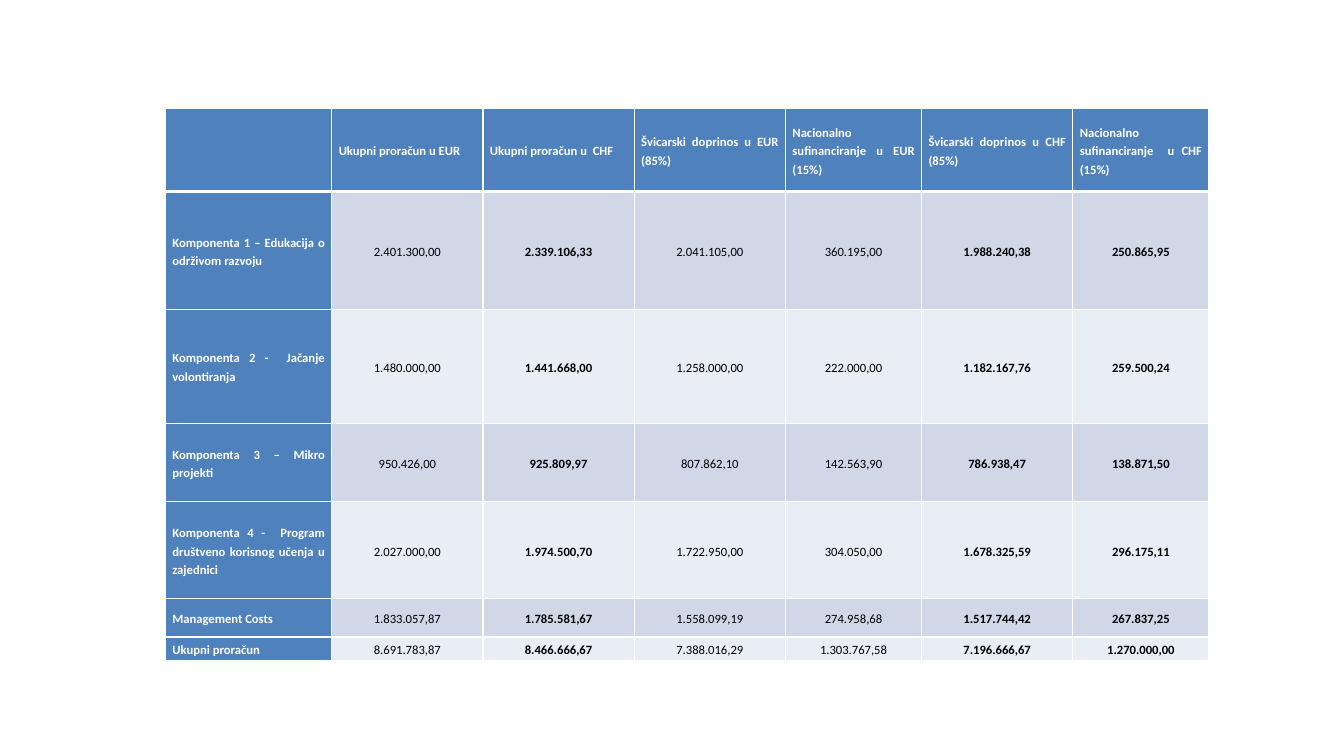
from lxml import etree
from pptx import Presentation
from pptx import util as u
from pptx.dml.color import RGBColor
from pptx.enum import text
from pptx.oxml.ns import qn

PX = 9144  # EMU per px, 100 px to the inch
COLORS = {"header": "4F81BD", "band_dark": "D0D8E8", "band_light": "E9EDF4",
          "white": "FFFFFF", "black": "000000"}
FONT = "Calibri"

COLUMN_WIDTHS = [165, 150, 150, 150, 135, 150, 135]
ROW_HEIGHTS = [82, 117, 113, 78, 96, 38, 23]
BOLD_COLUMNS = {0, 2, 5, 6}
BUDGET = [
    ["", "Ukupni proračun u EUR", "Ukupni proračun u  CHF",
     "Švicarski doprinos u EUR (85%)", "Nacionalno sufinanciranje u EUR (15%)",
     "Švicarski doprinos u CHF (85%)", "Nacionalno sufinanciranje  u CHF (15%)"],
    ["Komponenta 1 – Edukacija o održivom razvoju", "2.401.300,00", "2.339.106,33",
     "2.041.105,00", "360.195,00", "1.988.240,38", "250.865,95"],
    ["Komponenta 2 -  Jačanje volontiranja", "1.480.000,00", "1.441.668,00",
     "1.258.000,00", "222.000,00", "1.182.167,76", "259.500,24"],
    ["Komponenta 3 – Mikro projekti", "950.426,00", "925.809,97",
     "807.862,10", "142.563,90", "786.938,47", "138.871,50"],
    ["Komponenta 4 -  Program društveno korisnog učenja u zajednici", "2.027.000,00",
     "1.974.500,70", "1.722.950,00", "304.050,00", "1.678.325,59", "296.175,11"],
    ["Management Costs", "1.833.057,87", "1.785.581,67",
     "1.558.099,19", "274.958,68", "1.517.744,42", "267.837,25"],
    ["Ukupni proračun", "8.691.783,87", "8.466.666,67",
     "7.388.016,29", "1.303.767,58", "7.196.666,67", "1.270.000,00"],
]


def px(length):
    return u.Emu(length * PX)


def rgb(name):
    return RGBColor.from_string(COLORS[name])


def set_borders(cell, top, bottom):
    """Draw white borders; top and bottom are widths in points, the sides are 1 pt."""
    properties = cell._tc.get_or_add_tcPr()
    for side, width in (("L", 1), ("R", 1), ("T", top), ("B", bottom)):
        line = etree.SubElement(properties, qn(f"a:ln{side}"), w=str(u.Pt(width)))
        fill = etree.SubElement(line, qn("a:solidFill"))
        etree.SubElement(fill, qn("a:srgbClr"), val=COLORS["white"])


def fill_cell(cell, words, row, column):
    is_label = row == 0 or column == 0
    set_borders(cell, top=3 if row == 1 else 1, bottom=3 if row == 0 else 1)
    cell.fill.solid()
    band = "band_dark" if row % 2 else "band_light"
    cell.fill.fore_color.rgb = rgb("header" if is_label else band)
    cell.vertical_anchor = text.MSO_ANCHOR.MIDDLE
    cell.margin_left = cell.margin_right = px(7)
    cell.margin_top = cell.margin_bottom = 0

    para = cell.text_frame.paragraphs[0]
    para.text = words
    para.alignment = text.PP_ALIGN.JUSTIFY if is_label else text.PP_ALIGN.CENTER
    para.line_spacing = u.Pt(13)
    for span in para.runs:
        span.font.name = FONT
        span.font.size = u.Pt(9)
        span.font.bold = is_label or column in BOLD_COLUMNS
        span.font.color.rgb = rgb("white" if is_label else "black")


def add_budget_table(page, left, top):
    frame = page.shapes.add_table(
        len(ROW_HEIGHTS), len(COLUMN_WIDTHS), px(left), px(top),
        px(sum(COLUMN_WIDTHS)), px(sum(ROW_HEIGHTS)))
    table = frame.table
    for column, width in zip(table.columns, COLUMN_WIDTHS):
        column.width = px(width)
    for row, height in zip(table.rows, ROW_HEIGHTS):
        row.height = px(height)
    for row, values in enumerate(BUDGET):
        for column, words in enumerate(values):
            fill_cell(table.cell(row, column), words, row, column)


def main():
    deck = Presentation()
    deck.slide_width, deck.slide_height = px(1333), px(750)
    page = deck.slides.add_slide(deck.slide_layouts[6])
    page.background.fill.solid()
    page.background.fill.fore_color.rgb = rgb("white")
    add_budget_table(page, left=164, top=108)
    deck.save("out.pptx")


if __name__ == "__main__":
    main()
